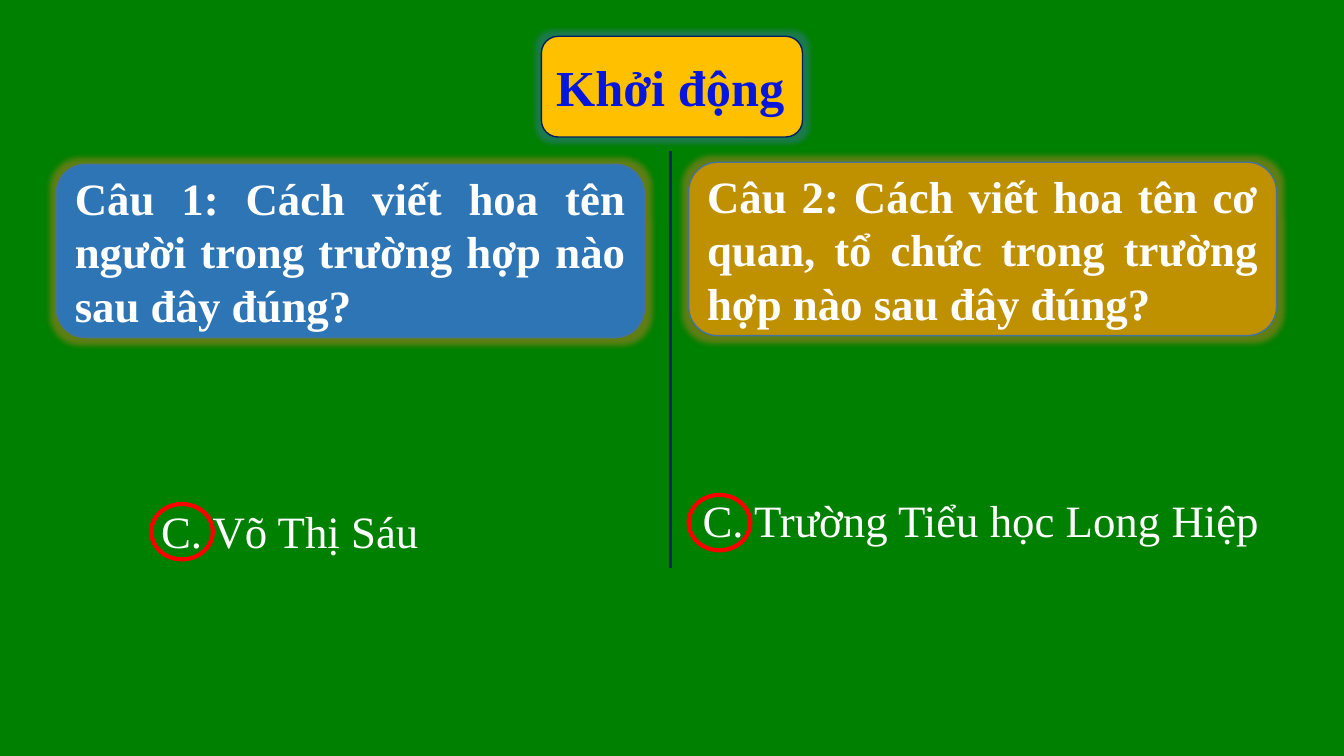
from dataclasses import dataclass

from lxml import etree
from pptx import Presentation
from pptx.dml.color import RGBColor
from pptx.enum.shapes import MSO_CONNECTOR, MSO_SHAPE
from pptx.enum.text import MSO_ANCHOR, PP_ALIGN
from pptx.oxml.ns import qn
from pptx.util import Inches, Pt

LINE = MSO_CONNECTOR.STRAIGHT
ROUND, OVAL = MSO_SHAPE.ROUNDED_RECTANGLE, MSO_SHAPE.OVAL
MIDDLE = MSO_ANCHOR.MIDDLE
LEFT, JUSTIFY = PP_ALIGN.LEFT, PP_ALIGN.JUSTIFY
WIDTH, HEIGHT = Inches(13.33), Inches(7.5)


@dataclass(frozen=True)
class Theme:
    """Colours, font and type sizes of the slide."""
    back: str = "008000"
    white: str = "FFFFFF"
    blue: str = "2E75B6"
    ochre: str = "BF9000"
    edge: str = "43739E"
    gold: str = "FFC000"
    navy: str = "002060"
    rule: str = "0E2557"
    ink: str = "0716DB"
    red: str = "FF0000"
    warm: str = "ED7D31"
    cool: str = "4472C4"
    font: str = "Times New Roman"
    head: int = 36
    body: int = 32


THEME = Theme()


def tint(name):
    """Turn a hex string into a colour."""
    return RGBColor.from_string(name)


def place(left, top, width, height):
    """Turn percent shares of the slide into lengths."""
    return (int(WIDTH * left / 100), int(HEIGHT * top / 100),
            int(WIDTH * width / 100), int(HEIGHT * height / 100))


def write(shape, text, size, color, bold=False, align=JUSTIFY):
    """Fill a shape with one styled paragraph."""
    frame = shape.text_frame
    frame.word_wrap = True
    frame.text = text
    para = frame.paragraphs[0]
    para.alignment = align
    font = para.runs[0].font
    font.name, font.size, font.bold = THEME.font, Pt(size), bold
    font.color.rgb = tint(color)
    return para


def add_glow(shape, color):
    """Give a shape a soft, partly clear glow."""
    effects = shape._element.spPr.find(qn("a:effectLst"))
    glow = etree.SubElement(effects, qn("a:glow"), rad=str(Pt(8)))
    shade = etree.SubElement(glow, qn("a:srgbClr"), val=color)
    etree.SubElement(shade, qn("a:alpha"), val="40000")


def add_panel(slide, box, fill, edge, glow):
    """Draw a glowing round panel for centred-height text."""
    panel = slide.shapes.add_shape(ROUND, *place(*box))
    panel.shadow.inherit = False
    panel.fill.solid()
    panel.fill.fore_color.rgb = tint(fill)
    panel.line.color.rgb = tint(edge)
    panel.line.width = Pt(1)
    panel.text_frame.vertical_anchor = MIDDLE
    add_glow(panel, glow)
    return panel


def add_reply(slide, box, text):
    """Write an answer line."""
    reply = slide.shapes.add_textbox(*place(*box))
    write(reply, text, THEME.body, THEME.white).line_spacing = 0.9


def add_ring(slide, left, top):
    """Circle the letter of the right answer."""
    ring = slide.shapes.add_shape(OVAL, *place(left, top, 4.58, 7.33))
    ring.shadow.inherit = False
    ring.fill.background()
    ring.line.color.rgb = tint(THEME.red)
    ring.line.width = Pt(3)


def add_rule(slide, left, top, height):
    """Draw the upright line between the two questions."""
    x, y, _, drop = place(left, top, 0, height)
    rule = slide.shapes.add_connector(LINE, x, y, x, y + drop)
    rule.line.color.rgb = tint(THEME.rule)
    rule.line.width = Pt(2.25)
    etree.SubElement(rule._element.spPr, qn("a:effectLst"))


def main():
    """Build and save the slide."""
    deck = Presentation()
    deck.slide_width, deck.slide_height = WIDTH, HEIGHT
    slide = deck.slides.add_slide(deck.slide_layouts[6])
    slide.background.fill.solid()
    slide.background.fill.fore_color.rgb = tint(THEME.back)

    cards = [
        ("Câu 1: Cách viết hoa tên người trong trường hợp nào sau đây đúng?",
         (4.2, 21.73, 43.74, 22.93), THEME.blue),
        ("Câu 2: Cách viết hoa tên cơ quan, tổ chức trong trường hợp nào "
         "sau đây đúng?", (51.24, 21.47, 43.74, 22.93), THEME.ochre),
    ]
    for text, box, fill in cards:
        card = add_panel(slide, box, fill, THEME.edge, THEME.warm)
        write(card, text, THEME.body, THEME.white, bold=True)

    replies = [
        ("C. Võ Thị Sáu", (11.25, 66.8, 30.23, 8.93), (11.25, 66.67)),
        ("C. Trường Tiểu học Long Hiệp", (51.54, 65.33, 44.04, 8.93),
         (51.24, 65.47)),
    ]
    for text, box, ring in replies:
        add_reply(slide, box, text)
        add_ring(slide, *ring)

    add_rule(slide, 49.89, 20, 55.2)
    title = add_panel(slide, (40.28, 4.8, 19.43, 13.33), THEME.gold,
                      THEME.navy, THEME.cool)
    write(title, "Khởi động", THEME.head, THEME.ink, bold=True, align=LEFT)
    deck.save("out.pptx")


if __name__ == "__main__":
    main()
